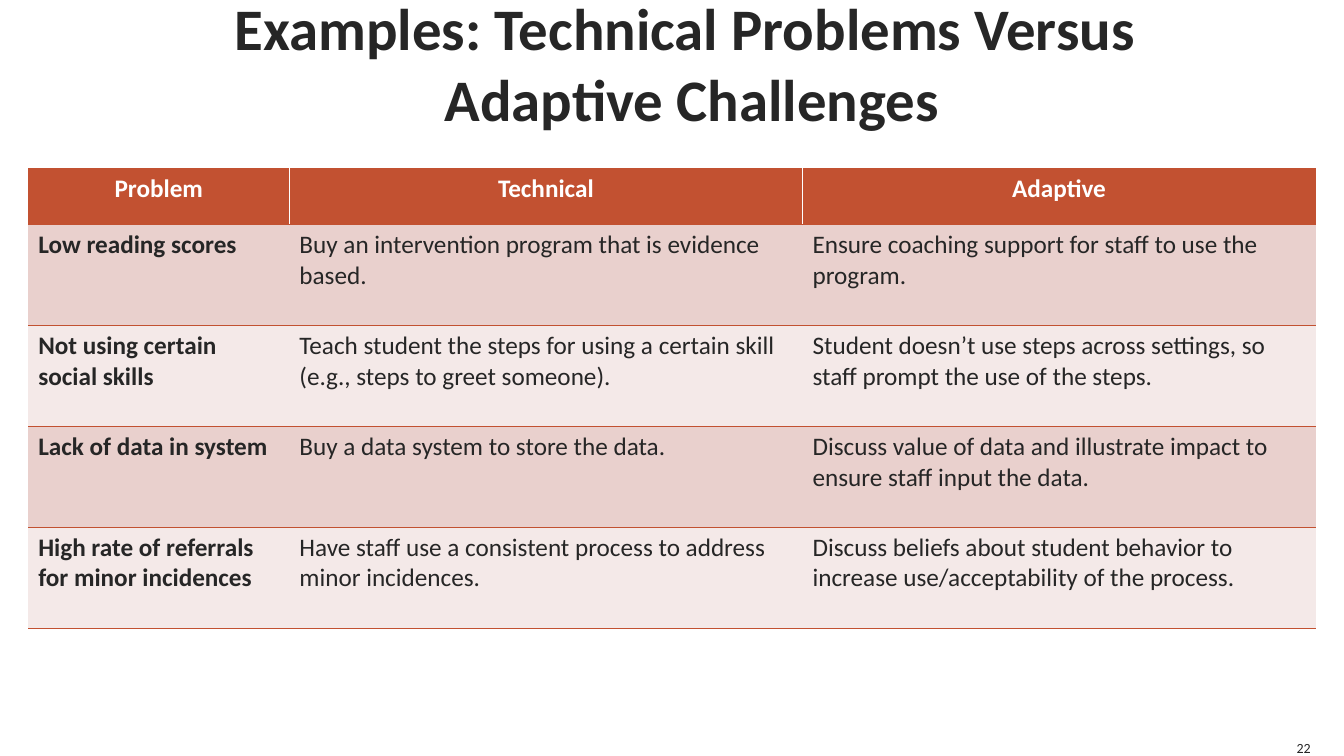
from pptx import Presentation
from pptx.dml.color import RGBColor
from pptx.enum.text import MSO_ANCHOR, PP_ALIGN
from pptx.oxml.ns import qn
from pptx.util import Inches, Pt
from lxml.etree import SubElement

TITLE = "Examples: Technical Problems Versus \vAdaptive Challenges"
PAGE = "22"
ROWS = [
    ("Problem", "Technical", "Adaptive"),
    ("Low reading scores",
     "Buy an intervention program that is evidence based.",
     "Ensure coaching support for staff to use the program."),
    ("Not using certain social skills",
     "Teach student the steps for using a certain skill (e.g., steps to greet someone).",
     "Student doesn’t use steps across settings, so staff prompt the use of the steps."),
    ("Lack of data in system",
     "Buy a data system to store the data.",
     "Discuss value of data and illustrate impact to ensure staff input the data."),
    ("High rate of referrals for minor incidences",
     "Have staff use a consistent process to address minor incidences.",
     "Discuss beliefs about student behavior to increase use/acceptability of the process."),
]
WIDTHS = (2.59, 5.09, 5.09)
HEAD, BODY = 0.56, 1.0
INK, RUST, WHITE = "262626", "C25131", "FFFFFF"
BANDS = ("F4E9E8", "E9D0CD")


def color(code):
    return RGBColor.from_string(code)


def write(frame, text, size=18, ink=INK, bold=False, align=PP_ALIGN.LEFT):
    para = frame.paragraphs[0]
    para.text = text
    para.alignment = align
    for run in para.runs:
        font = run.font
        font.name, font.size, font.bold = "Calibri", Pt(size), bold
        font.color.rgb = color(ink)


def add_box(left, top, width, height, text, anchor, wrap=True, **style):
    box = slide.shapes.add_textbox(*map(Inches, (left, top, width, height)))
    frame = box.text_frame
    frame.word_wrap = wrap
    frame.vertical_anchor = anchor
    frame.margin_left = frame.margin_right = 0
    frame.margin_top = frame.margin_bottom = 0
    write(frame, text, **style)


def edge(cell, side, code=None, width=0.5):
    line = SubElement(cell._tc.get_or_add_tcPr(), qn(f"a:ln{side}"), w=str(Pt(width)))
    if code:
        fill = SubElement(line, qn("a:solidFill"))
        SubElement(fill, qn("a:srgbClr"), val=code)
    else:
        SubElement(line, qn("a:noFill"))


deck = Presentation()
deck.slide_width, deck.slide_height = Inches(13.33), Inches(7.5)
slide = deck.slides.add_slide(deck.slide_layouts[6])

add_box(0.5, 0, 12.72, 1.24, TITLE, MSO_ANCHOR.MIDDLE,
        size=42, bold=True, align=PP_ALIGN.CENTER)
add_box(12.83, 7.33, 0.17, 0.17, PAGE, MSO_ANCHOR.BOTTOM, wrap=False,
        size=10, align=PP_ALIGN.RIGHT)

high = HEAD + BODY * (len(ROWS) - 1)
table = slide.shapes.add_table(
    len(ROWS), len(WIDTHS), Inches(0.28), Inches(1.67),
    Inches(sum(WIDTHS)), Inches(high)).table
table.first_row = table.horz_banding = False
for col, width in zip(table.columns, WIDTHS):
    col.width = Inches(width)

last = len(WIDTHS) - 1
for r, row in enumerate(ROWS):
    head = r == 0
    table.rows[r].height = Inches(HEAD if head else BODY)
    for c, text in enumerate(row):
        cell = table.cell(r, c)
        edge(cell, "L", WHITE if head and c > 0 else None, 1)
        edge(cell, "R", WHITE if head and c < last else None, 1)
        edge(cell, "T", RUST)
        edge(cell, "B", RUST)
        cell.fill.solid()
        cell.fill.fore_color.rgb = color(RUST if head else BANDS[r % 2])
        write(cell.text_frame, text, ink=WHITE if head else INK,
              bold=head or c == 0,
              align=PP_ALIGN.CENTER if head else PP_ALIGN.LEFT)

deck.save("out.pptx")
